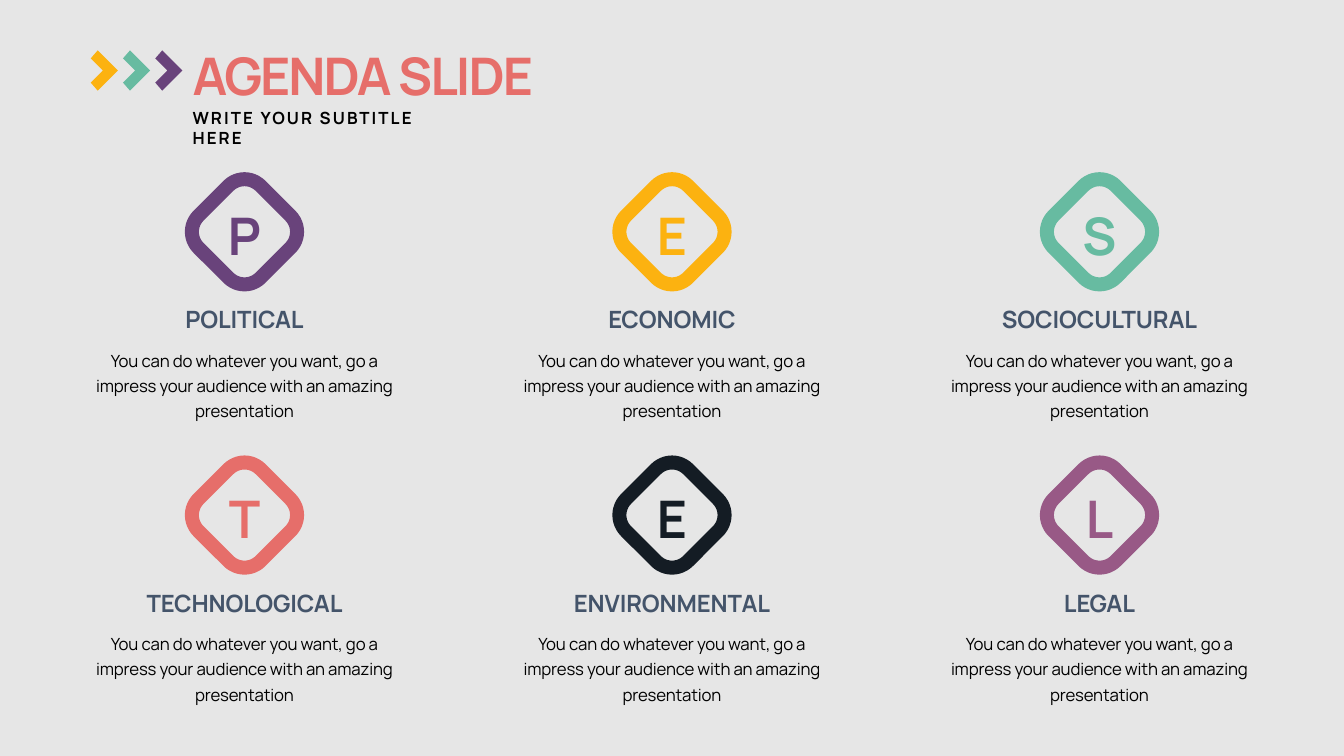
from dataclasses import dataclass

from pptx import Presentation
from pptx.dml.color import RGBColor
from pptx.enum.shapes import MSO_SHAPE as Shape
from pptx.enum.text import MSO_ANCHOR as Anchor, MSO_AUTO_SIZE as Fit, PP_ALIGN as Align
from pptx.util import Inches, Pt


@dataclass(frozen=True)
class Theme:
    font: str = "Manrope"
    back: str = "E6E6E6"
    black: str = "000000"
    slate: str = "44546A"
    purple: str = "69437B"
    gold: str = "FCB210"
    green: str = "67BBA1"
    coral: str = "E66E6A"
    ink: str = "141C24"
    plum: str = "985986"
    large: float = 37
    medium: float = 17
    small: float = 12


@dataclass(frozen=True)
class Topic:
    name: str
    color: str


THEME = Theme()
WIDTH, HEIGHT = 13.33, 7.5
BLURB = "You can do whatever you want, go a impress your audience with an amazing presentation"
TOPICS = [
    Topic("POLITICAL", THEME.purple),
    Topic("ECONOMIC", THEME.gold),
    Topic("SOCIOCULTURAL", THEME.green),
    Topic("TECHNOLOGICAL", THEME.coral),
    Topic("ENVIRONMENTAL", THEME.ink),
    Topic("LEGAL", THEME.plum),
]

# Grid of topics, measured from the centre of each diamond
COLS, COL_STEP, ROW_STEP, TOP = 3, 4.24, 2.81, 2.3
SIDE, ROUND, LINE = 0.87, 0.26, 10
TEXT_W, MARK_W = 3.18, 0.74

# Chevrons: outline relative to the upper left corner
CHEVRON = [(0.07, 0), (0.27, 0.2), (0.07, 0.4), (0, 0.32), (0.12, 0.2), (0, 0.08)]
CHEV_X, CHEV_Y, CHEV_STEP = 0.9, 0.5, 0.32


def put_text(shape, text: str, *, at: tuple, size: float, color: str,
             bold: bool = False, gap: float = 0, align=Align.CENTER,
             anchor=Anchor.TOP, line=None) -> None:
    """Place a text shape and write one formatted paragraph in it."""
    shape.left, shape.top, shape.width, shape.height = map(Inches, at)
    frame = shape.text_frame
    frame.word_wrap = True
    frame.auto_size = Fit.SHAPE_TO_FIT_TEXT
    frame.vertical_anchor = anchor
    para = frame.paragraphs[0]
    para.alignment = align
    para.space_before = Pt(0)
    if line:
        para.line_spacing = Pt(line)
    run = para.add_run()
    run.text = text
    font = run.font
    font.name, font.size, font.bold = THEME.font, Pt(size), bold
    font.color.rgb = RGBColor.from_string(color)
    run._r.get_or_add_rPr().set("spc", str(round(gap * 100)))


def add_text(slide, text: str, **style) -> None:
    put_text(slide.shapes.add_textbox(0, 0, 0, 0), text, **style)


def add_chevron(slide, left: float, color: str) -> None:
    points = [(Inches(left + x), Inches(CHEV_Y + y)) for x, y in CHEVRON]
    pen = slide.shapes.build_freeform(*points[0])
    pen.add_line_segments(points[1:], close=True)
    shape = pen.convert_to_shape()
    shape.shadow.inherit = False
    shape.fill.solid()
    shape.fill.fore_color.rgb = RGBColor.from_string(color)
    shape.line.fill.background()


def add_topic(slide, topic: Topic, mid: float, row: float) -> None:
    # Diamond
    gem = slide.shapes.add_shape(
        Shape.ROUNDED_RECTANGLE, Inches(mid - SIDE / 2), Inches(row - SIDE / 2),
        Inches(SIDE), Inches(SIDE))
    gem.adjustments[0] = ROUND
    gem.rotation = 45
    gem.shadow.inherit = False
    gem.fill.background()
    gem.line.color.rgb = RGBColor.from_string(topic.color)
    gem.line.width = Pt(LINE)

    # Initial, heading and description
    left = mid - TEXT_W / 2
    add_text(slide, topic.name[0], at=(mid - MARK_W / 2, row - 0.33, MARK_W, 0.72),
             size=THEME.large, color=topic.color, bold=True, gap=-1.4,
             anchor=Anchor.MIDDLE)
    add_text(slide, topic.name, at=(left, row + 0.67, TEXT_W, 0.39),
             size=THEME.medium, color=THEME.slate, bold=True, gap=-0.1,
             anchor=Anchor.BOTTOM)
    add_text(slide, BLURB, at=(left, row + 1.08, TEXT_W, 0.85),
             size=THEME.small, color=THEME.black, gap=-0.1, line=18)


def main() -> None:
    deck = Presentation()
    deck.slide_width, deck.slide_height = Inches(WIDTH), Inches(HEIGHT)
    slide = deck.slides.add_slide(deck.slide_layouts[0])
    fill = slide.background.fill
    fill.solid()
    fill.fore_color.rgb = RGBColor.from_string(THEME.back)

    # Title and subtitle
    put_text(slide.shapes.title, "AGENDA SLIDE", at=(1.81, 0.38, 4.67, 0.72),
             size=THEME.large, color=THEME.coral, bold=True, gap=-1.4,
             align=Align.LEFT, anchor=Anchor.BOTTOM)
    put_text(slide.placeholders[1], "WRITE YOUR SUBTITLE HERE",
             at=(1.81, 1.02, 2.81, 0.3), size=THEME.small, color=THEME.black,
             bold=True, gap=1.5, align=Align.LEFT)

    # Chevrons
    for i, color in enumerate((THEME.gold, THEME.green, THEME.purple)):
        add_chevron(slide, CHEV_X + i * CHEV_STEP, color)

    # Topics
    for i, topic in enumerate(TOPICS):
        row, col = divmod(i, COLS)
        add_topic(slide, topic, WIDTH / 2 + (col - 1) * COL_STEP, TOP + row * ROW_STEP)

    deck.save("out.pptx")


if __name__ == "__main__":
    main()
